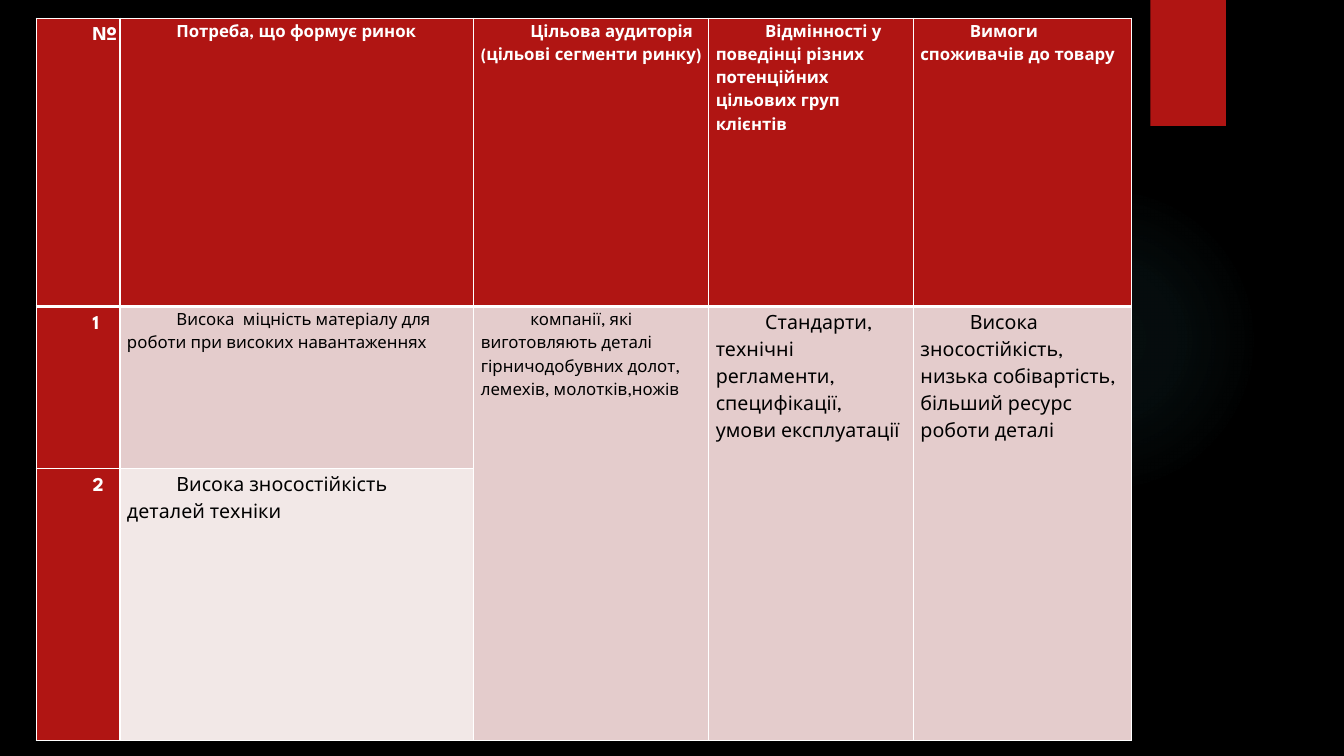
from lxml import etree
from pptx import Presentation
from pptx import util as u
from pptx.dml.color import RGBColor
from pptx.enum import shapes
from pptx.oxml import ns, parse_xml

COLORS = {
    "back": "000000", "red": "B01513", "white": "FFFFFF", "ink": "000000",
    "pink": "E4CCCC", "pale": "F2E8E7", "glow": "50B9C1",
}
FONT = "League Spartan"
COLS = [0.83, 3.51, 2.33, 2.03, 2.16]
ROWS = [2.86, 1.61, 2.7]
HEADS = [
    "№",
    "Потреба, що формує ринок",
    "Цільова аудиторія (цільові сегменти ринку)",
    "Відмінності у поведінці різних потенційних цільових груп клієнтів",
    "Вимоги споживачів до товару",
]
NEEDS = [
    ("1", "Висока  міцність матеріалу для роботи при високих навантаженнях", 12, "pink"),
    ("2", "Висока зносостійкість деталей техніки", 14, "pale"),
]
SHARED = [
    ("компанії, які виготовляють деталі гірничодобувних долот, лемехів, молотків,ножів", 12),
    ("Стандарти, технічні регламенти, специфікації, умови експлуатації", 14),
    ("Висока зносостійкість, низька собівартість, більший ресурс роботи деталі", 14),
]


def rgb(name):
    return RGBColor.from_string(COLORS[name])


class Deck:
    def __init__(self):
        self.prs = Presentation()
        self.prs.slide_width = u.Inches(13.33)
        self.prs.slide_height = u.Inches(7.5)
        self.slide = self.prs.slides.add_slide(self.prs.slide_layouts[6])
        back = self.slide.background.fill
        back.solid()
        back.fore_color.rgb = rgb("back")

    def shape(self, kind, box, color):
        item = self.slide.shapes.add_shape(kind, *map(u.Inches, box))
        item.shadow.inherit = False
        item.fill.solid()
        item.fill.fore_color.rgb = rgb(color)
        item.line.fill.background()
        return item

    def glow(self, box, color, stops):
        """Draw a disc whose tint fades outward; stops are (place, opacity) in percent."""
        disc = self.shape(shapes.MSO_SHAPE.OVAL, box, color)
        marks = "".join(
            f'<a:gs pos="{place * 1000}"><a:srgbClr val="{COLORS[color]}">'
            f'<a:alpha val="{alpha * 1000}"/></a:srgbClr></a:gs>'
            for place, alpha in stops)
        grad = parse_xml(
            f'<a:gradFill {ns.nsdecls("a")}><a:gsLst>{marks}</a:gsLst><a:path path="circle">'
            '<a:fillToRect l="50000" t="50000" r="50000" b="50000"/></a:path></a:gradFill>')
        props = disc._element.spPr
        props.replace(props.find(ns.qn("a:solidFill")), grad)

    def tab(self, box, color):
        """Draw the accent tab with a soft shadow below it."""
        item = self.shape(shapes.MSO_SHAPE.RECTANGLE, box, color)
        effects = item._element.spPr.find(ns.qn("a:effectLst"))
        effects.append(parse_xml(
            f'<a:outerShdw {ns.nsdecls("a")} blurRad="{u.Pt(3)}" dist="{u.Pt(2)}" dir="5400000">'
            '<a:srgbClr val="000000"><a:alpha val="45000"/></a:srgbClr></a:outerShdw>'))

    def table(self, left, top, cols, rows):
        frame = self.slide.shapes.add_table(
            len(rows), len(cols), u.Inches(left), u.Inches(top),
            u.Inches(sum(cols)), u.Inches(sum(rows)))
        grid = frame.table
        grid.first_row = grid.horz_banding = False
        for col, width in zip(grid.columns, cols):
            col.width = u.Inches(width)
        for row, height in zip(grid.rows, rows):
            row.height = u.Inches(height)
        return grid

    def edges(self, cell, top=1, base=1):
        props = cell._tc.get_or_add_tcPr()
        for side, width in zip("LRTB", (1, 1, top, base)):
            line = etree.SubElement(props, ns.qn(f"a:ln{side}"), w=str(u.Pt(width)))
            fill = etree.SubElement(line, ns.qn("a:solidFill"))
            etree.SubElement(fill, ns.qn("a:srgbClr"), val=COLORS["white"])

    def cell(self, cell, words, size, fill, color="ink", bold=False):
        cell.fill.solid()
        cell.fill.fore_color.rgb = rgb(fill)
        cell.margin_left = cell.margin_right = u.Inches(0.07)
        cell.margin_top = cell.margin_bottom = 0
        para = cell.text_frame.paragraphs[0]
        para.line_spacing = 1.5
        para._p.get_or_add_pPr().set("indent", str(u.Inches(0.49)))
        run = para.add_run()
        run.text = words
        font = run.font
        font.name, font.size, font.bold = FONT, u.Pt(size), bold
        font.color.rgb = rgb(color)


def main():
    deck = Deck()
    deck.glow((9.41, 1.83, 3.08, 3.08), "glow", [(0, 7), (36, 6), (69, 0)])
    deck.tab((11.41, 0, 0.75, 1.25), "red")

    grid = deck.table(0.36, 0.18, COLS, ROWS)
    for row in range(len(ROWS)):
        for col in range(len(COLS)):
            deck.edges(grid.cell(row, col), 3 if row == 1 else 1, 3 if row == 0 else 1)
    for col, head in enumerate(HEADS):
        deck.cell(grid.cell(0, col), head, 12 if col else 14, "red", "white", True)
    for row, (mark, need, size, fill) in enumerate(NEEDS, 1):
        deck.cell(grid.cell(row, 0), mark, 14, "red", "white", True)
        deck.cell(grid.cell(row, 1), need, size, fill)
    for col, (words, size) in enumerate(SHARED, 2):
        first = grid.cell(1, col)
        first.merge(grid.cell(2, col))
        deck.cell(first, words, size, "pink")

    deck.prs.save("out.pptx")


if __name__ == "__main__":
    main()
